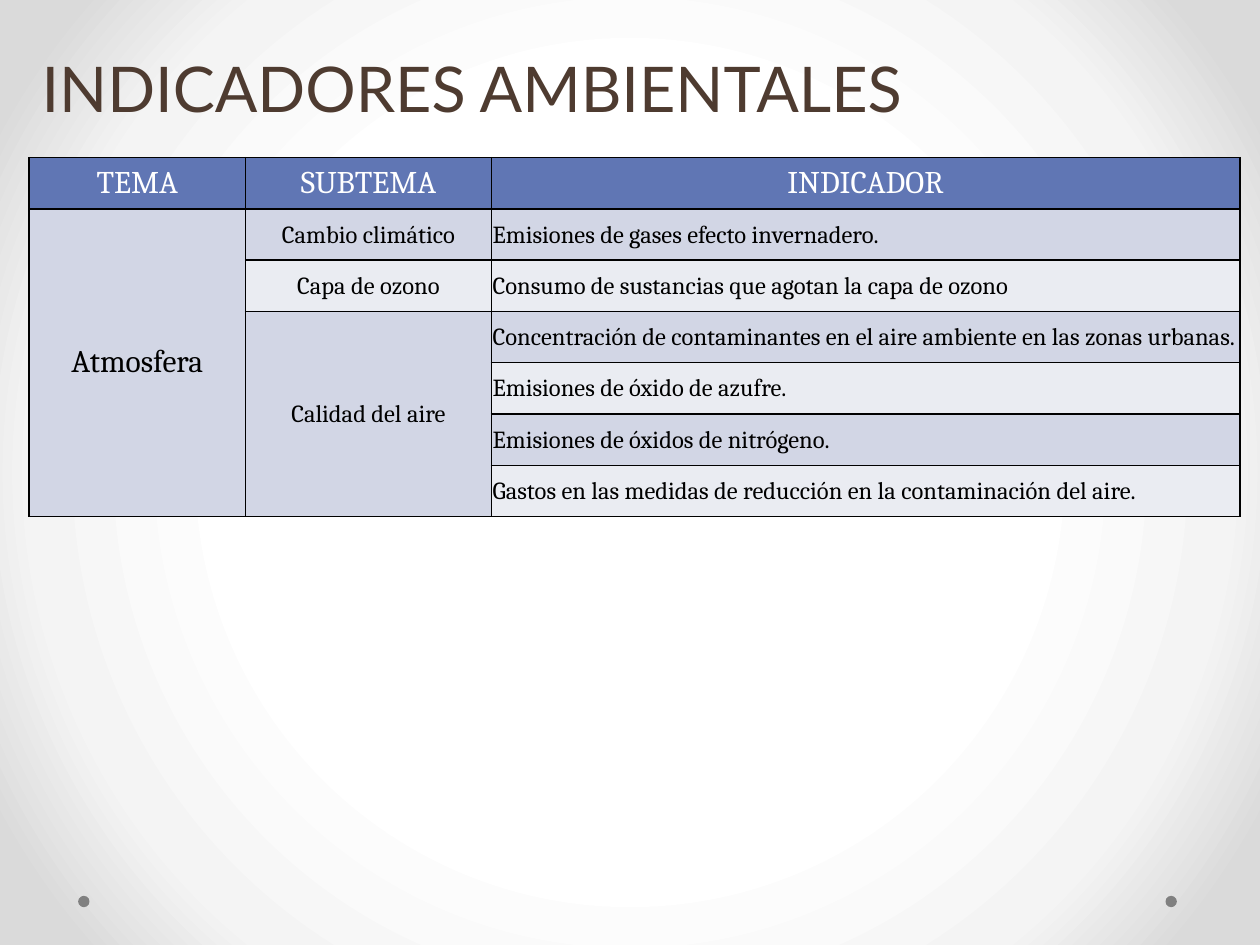
from lxml import etree
from pptx import Presentation
from pptx.dml.color import RGBColor
from pptx.enum.shapes import MSO_SHAPE
from pptx.enum.text import MSO_ANCHOR, PP_ALIGN
from pptx.oxml import parse_xml
from pptx.oxml.ns import nsdecls, qn
from pptx.util import Inches, Pt

OVAL = MSO_SHAPE.OVAL
MIDDLE = MSO_ANCHOR.MIDDLE
LEFT, CENTER = PP_ALIGN.LEFT, PP_ALIGN.CENTER

WHITE = RGBColor(0xFF, 0xFF, 0xFF)
BLACK = RGBColor(0, 0, 0)
BROWN = RGBColor(0x4E, 0x3B, 0x30)
GRAY = RGBColor(0x80, 0x80, 0x80)
BLUE = RGBColor(0x60, 0x76, 0xB4)
BANDS = [RGBColor(0xD2, 0xD6, 0xE5), RGBColor(0xEA, 0xEC, 0xF2)]
GLOW = [(50, WHITE), (76, RGBColor(0xF4, 0xF4, 0xF4)),
        (92, RGBColor(0xDA, 0xDA, 0xDA))]

HEADS = ["TEMA", "SUBTEMA", "INDICADOR"]
THEME = "Atmosfera"
TOPICS = [
    ("Cambio climático", ["Emisiones de gases efecto invernadero."]),
    ("Capa de ozono", ["Consumo de sustancias que agotan la capa de ozono"]),
    ("Calidad del aire", [
        "Concentración de contaminantes en el aire ambiente en las zonas urbanas.",
        "Emisiones de óxido de azufre.",
        "Emisiones de óxidos de nitrógeno.",
        "Gastos en las medidas de reducción en la contaminación del aire.",
    ]),
]
WIDTHS = [1.72, 1.95, 5.94]


def add_run(frame, text, size, font, color, align):
    para = frame.paragraphs[0]
    para.alignment = align
    run = para.add_run()
    run.text = text
    run.font.size = Pt(size)
    run.font.name = font
    run.font.color.rgb = color


def set_back(slide):
    slide.background.fill.gradient()
    grad = slide.element.find(".//" + qn("a:gradFill"))
    stops = "".join(
        f'<a:gs pos="{pos * 1000}"><a:srgbClr val="{color}"/></a:gs>'
        for pos, color in GLOW)
    new = parse_xml(
        f'<a:gradFill {nsdecls("a")} rotWithShape="1"><a:gsLst>{stops}</a:gsLst>'
        '<a:path path="circle"><a:fillToRect l="50000" t="50000" r="50000" '
        'b="50000"/></a:path></a:gradFill>')
    grad.getparent().replace(grad, new)


def add_dots(slide, lefts, top, size):
    for left in lefts:
        dot = slide.shapes.add_shape(
            OVAL, Inches(left), Inches(top), Inches(size), Inches(size))
        dot.shadow.inherit = False
        dot.fill.solid()
        dot.fill.fore_color.rgb = GRAY
        dot.line.fill.background()


def set_title(slide, left, top, width, height):
    title = slide.shapes.title
    title.left, title.top = Inches(left), Inches(top)
    title.width, title.height = Inches(width), Inches(height)
    frame = title.text_frame
    frame.vertical_anchor = MIDDLE
    add_run(frame, "INDICADORES AMBIENTALES", 36, "Lato", BROWN, LEFT)


def set_edges(cell):
    props = cell._tc.get_or_add_tcPr()
    for spot, side in enumerate(("lnL", "lnR", "lnT", "lnB")):
        line = etree.Element(qn("a:" + side), w=str(Pt(1)))
        fill = etree.SubElement(line, qn("a:solidFill"))
        etree.SubElement(fill, qn("a:srgbClr"), val=str(BLACK))
        props.insert(spot, line)


def fill_cell(cell, text, size, color, align, tight=True):
    cell.vertical_anchor = MIDDLE
    if tight:
        cell.margin_left = cell.margin_right = cell.margin_top = Inches(0.01)
        cell.margin_bottom = 0
    add_run(cell.text_frame, text, size, "Cambria", color, align)


def add_grid(slide, left, top, width, height):
    count = 1 + sum(len(items) for _, items in TOPICS)
    table = slide.shapes.add_table(
        count, len(HEADS), Inches(left), Inches(top),
        Inches(width), Inches(height)).table
    for col, size in zip(table.columns, WIDTHS):
        col.width = Inches(size)
    for row in range(count):
        table.rows[row].height = Inches(height / count)
        for col in range(len(HEADS)):
            cell = table.cell(row, col)
            cell.fill.solid()
            cell.fill.fore_color.rgb = BANDS[(row - 1) % 2] if row else BLUE
            set_edges(cell)
    for col, text in enumerate(HEADS):
        fill_cell(table.cell(0, col), text, 18, WHITE, CENTER)
    table.cell(1, 0).merge(table.cell(count - 1, 0))
    fill_cell(table.cell(1, 0), THEME, 18, BLACK, CENTER, tight=False)
    row = 1
    for topic, items in TOPICS:
        if len(items) > 1:
            table.cell(row, 1).merge(table.cell(row + len(items) - 1, 1))
        fill_cell(table.cell(row, 1), topic, 14, BLACK, CENTER)
        for item in items:
            fill_cell(table.cell(row, 2), item, 14, BLACK, LEFT)
            row += 1


def main():
    deck = Presentation()
    deck.slide_width, deck.slide_height = Inches(10), Inches(7.5)
    slide = deck.slides.add_slide(deck.slide_layouts[5])
    set_back(slide)
    add_dots(slide, (9.25, 0.62), 7.11, 0.09)
    set_title(slide, 0.23, 0.23, 9.5, 0.92)
    add_grid(slide, 0.23, 1.25, 9.61, 2.85)
    deck.save("out.pptx")


if __name__ == "__main__":
    main()
